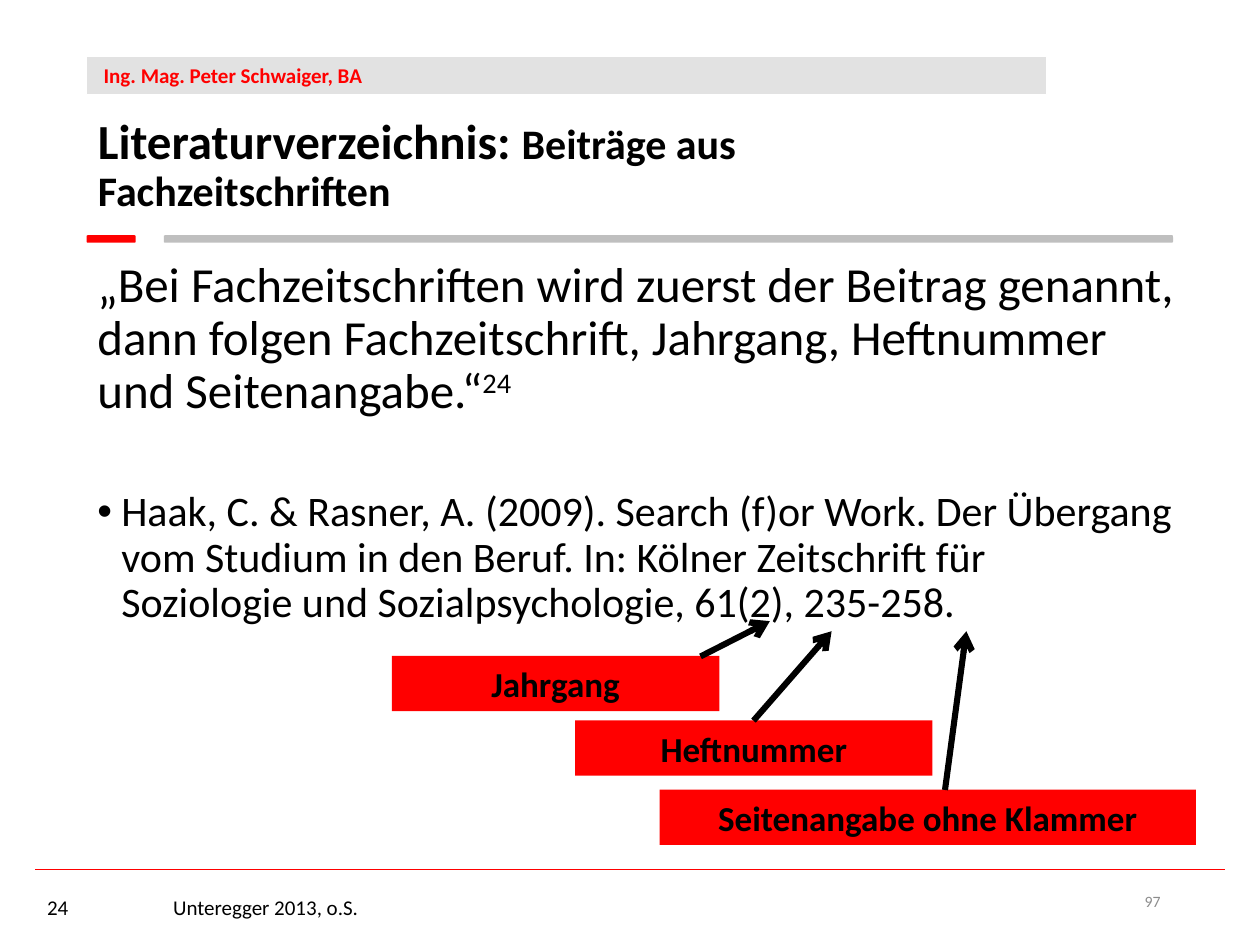
from pptx import Presentation
from pptx.dml.color import RGBColor
from pptx.enum.dml import MSO_LINE as DASH
from pptx.enum.shapes import MSO_CONNECTOR as CONNECTOR, MSO_SHAPE as SHAPE
from pptx.enum.text import MSO_ANCHOR as ANCHOR, PP_ALIGN as ALIGN
from pptx.oxml.ns import qn
from pptx.util import Inches, Pt
from lxml.etree import SubElement

COLORS = {"red": "FF0000", "black": "000000", "white": "FFFFFF",
          "banner": "D9D9D9", "rule": "BFBFBF", "number": "8C8C8C"}
FONT = "Calibri"

deck = Presentation()
deck.slide_width, deck.slide_height = Inches(10), Inches(7.5)
COLUMN, ROW = deck.slide_width / 100, deck.slide_height / 75
page = deck.slides.add_slide(deck.slide_layouts[5])


def grid(left, top, width, height):
    return [round(left * COLUMN), round(top * ROW), round(width * COLUMN), round(height * ROW)]


def add_span(para, text, size, color="black", bold=False):
    span = para.add_run()
    span.text = text
    span.font.name, span.font.size, span.font.bold = FONT, Pt(size), bold
    span.font.color.rgb = RGBColor.from_string(COLORS[color])
    return span


shapes = {}
for name, kind, place, color in [
    ("banner", SHAPE.RECTANGLE, (6.87, 4.5, 76.2, 3), "banner"),
    ("long rule", SHAPE.ROUNDED_RECTANGLE, (13, 18.67, 80.1, 0.6), "rule"),
    ("short rule", SHAPE.ROUNDED_RECTANGLE, (6.87, 18.67, 3.9, 0.6), "red"),
    ("Seitenangabe ohne Klammer", SHAPE.RECTANGLE, (52.36, 62.67, 42.55, 4.4), "red"),
    ("Heftnummer", SHAPE.RECTANGLE, (45.65, 57.17, 28.35, 4.4), "red"),
    ("Jahrgang", SHAPE.RECTANGLE, (31.1, 52.05, 26, 4.4), "red"),
]:
    shape = page.shapes.add_shape(kind, *grid(*place))
    shape.shadow.inherit = False
    shape.fill.solid()
    shape.fill.fore_color.rgb = RGBColor.from_string(COLORS[color])
    shape.line.fill.background()
    shapes[name] = shape

banner = shapes["banner"]
banner.line.color.rgb = RGBColor.from_string(COLORS["white"])
banner.line.width = Pt(0.75)
banner_color = banner.fill._xPr.find(qn("a:solidFill"))[0]
SubElement(banner_color, qn("a:alpha"), val="75000")
para = banner.text_frame.paragraphs[0]
para.alignment = ALIGN.LEFT
add_span(para, " Ing. Mag. Peter Schwaiger, BA", 12, "red", True)

for label in ("Jahrgang", "Heftnummer", "Seitenangabe ohne Klammer"):
    para = shapes[label].text_frame.paragraphs[0]
    para.alignment = ALIGN.CENTER
    add_span(para, label, 20, bold=True)

for start, end, color, weight, head in [
    ((2.8, 69), (97.2, 69), "red", 1, "none"),
    ((75, 62.7), (76.7, 50.1), "black", 3.5, "arrow"),
    ((55.6, 52.1), (61.1, 49.3), "black", 3.5, "arrow"),
    ((59.8, 57.2), (66, 50.1), "black", 3.5, "arrow"),
]:
    line = page.shapes.add_connector(CONNECTOR.STRAIGHT, *grid(*start, *end))
    line.line.color.rgb = RGBColor.from_string(COLORS[color])
    line.line.width = Pt(weight)
    line.line.dash_style = DASH.SOLID
    SubElement(line.line._get_or_add_ln(), qn("a:tailEnd"), type=head)
    SubElement(line._element.spPr, qn("a:effectLst"))
    line._element.remove(line._element.find(qn("p:style")))

title = page.shapes.title
title.left, title.top, title.width, title.height = grid(6.77, 8.33, 76.2, 9.7)
title.text_frame.word_wrap = True
title.text_frame.vertical_anchor = ANCHOR.MIDDLE
para = title.text_frame.paragraphs[0]
para.alignment, para.line_spacing = ALIGN.LEFT, 0.9
add_span(para, "Literaturverzeichnis: ", 28, bold=True)
add_span(para, "Beiträge aus Fachzeitschriften", 24, bold=True)

frames = {}
for name, place, anchor in [
    ("body", (6.74, 20.15, 88.2, 53.3), ANCHOR.TOP),
    ("footnote", (2.75, 69.5, 67.9, 5), ANCHOR.MIDDLE),
    ("page number", (70.6, 69.5, 22.5, 4), ANCHOR.MIDDLE),
]:
    box = page.shapes.add_textbox(*grid(*place))
    box.text_frame.word_wrap = True
    box.text_frame.vertical_anchor = anchor
    frames[name] = box.text_frame

quote = frames["body"].paragraphs[0]
quote.line_spacing = 0.9
add_span(quote, "„Bei Fachzeitschriften wird zuerst der Beitrag genannt, dann folgen "
         "Fachzeitschrift, Jahrgang, Heftnummer und Seitenangabe.“", 28)
mark = add_span(quote, "24", 28)
mark._r.get_or_add_rPr().set("baseline", "30000")

example = frames["body"].add_paragraph()
example.line_spacing, example.space_before = 0.9, Pt(41)
props = example._p.get_or_add_pPr()
props.set("marL", str(Inches(0.19)))
props.set("indent", str(Inches(-0.19)))
SubElement(props, qn("a:buFont"), typeface="Arial")
SubElement(props, qn("a:buChar"), char="•")
add_span(example, "Haak, C. & Rasner, A. (2009). Search (f)or Work. Der Übergang "
         "vom Studium in den Beruf. In: Kölner Zeitschrift für", 24)
example.add_line_break()
add_span(example, "Soziologie und Sozialpsychologie, 61(2), 235-258.", 24)

footnote = frames["footnote"].paragraphs[0]
tabs = SubElement(footnote._p.get_or_add_pPr(), qn("a:tabLst"))
SubElement(tabs, qn("a:tab"), pos=str(Inches(1)), algn="l")
add_span(footnote, "24\tUnteregger 2013, o.S.", 12)

number = frames["page number"].paragraphs[0]
number.alignment = ALIGN.RIGHT
add_span(number, "97", 9, "number")

deck.save("out.pptx")
